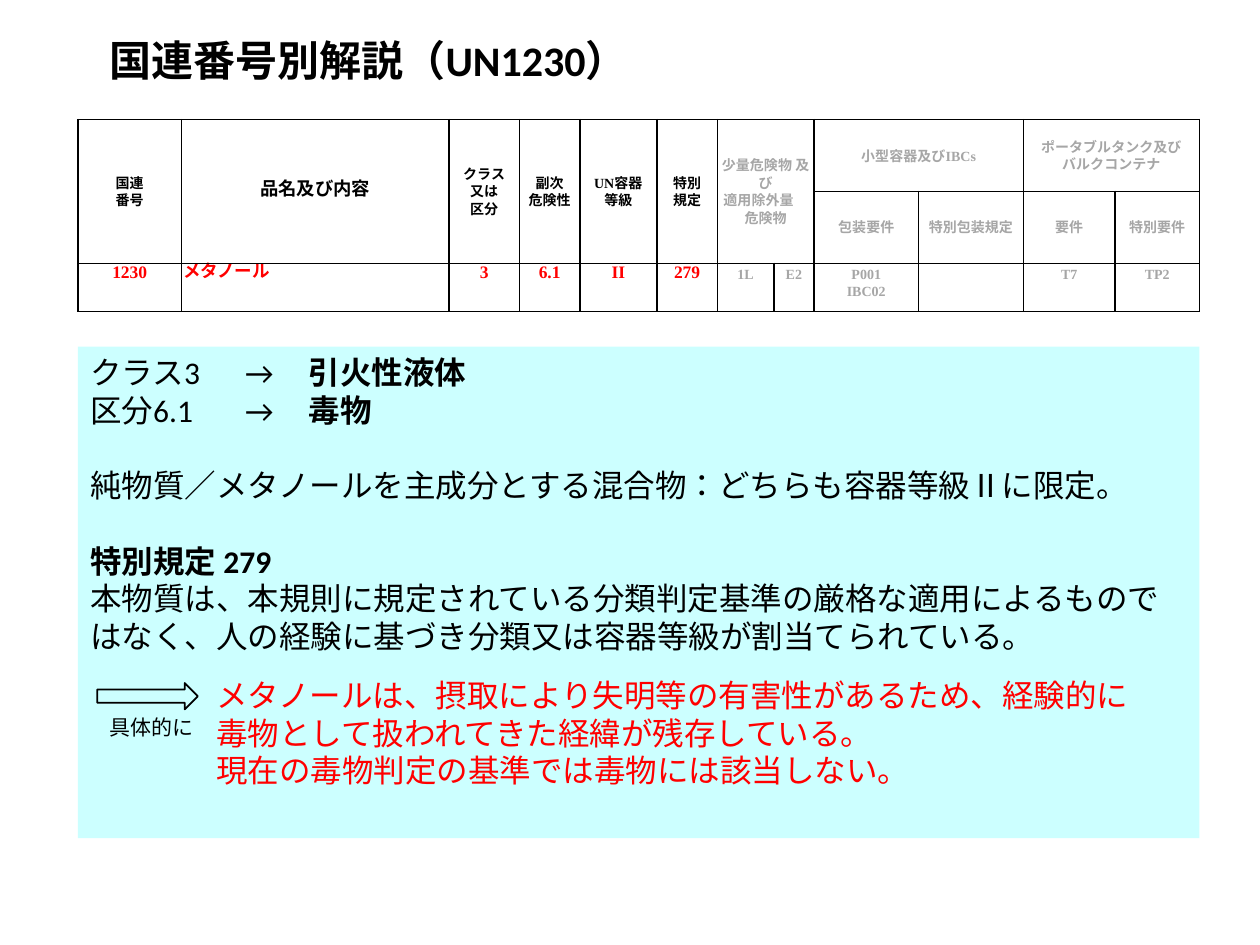
"""Build the UN1230 explanation slide."""
from dataclasses import dataclass

from lxml.etree import SubElement
from pptx import Presentation
from pptx.dml.color import RGBColor
from pptx.enum.lang import MSO_LANGUAGE_ID
from pptx.enum.shapes import MSO_SHAPE
from pptx.enum.text import MSO_ANCHOR, PP_ALIGN
from pptx.oxml import parse_xml
from pptx.oxml.ns import nsdecls, qn
from pptx.util import Cm, Pt


@dataclass(frozen=True)
class Theme:
    black: str = "000000"
    red: str = "FF0000"
    grey: str = "A6A6A6"
    panel: str = "CCFFFF"
    title: float = 24
    body: float = 18
    label: float = 12
    name: float = 10.5
    entry: float = 10
    small: float = 8
    line: float = 1
    sans: str = "Calibri"
    plain: str = "Arial"
    serif: str = "Times New Roman"
    japanese: str = "Noto Sans CJK JP"


class Page:
    def __init__(self, slide, theme):
        self.slide = slide
        self.theme = theme

    def span(self, para, text, size, color=None, name=None, bold=False):
        span = para.add_run()
        span.text = text
        values = {
            "size": Pt(size),
            "name": name or self.theme.sans,
            "bold": bold,
            "language_id": MSO_LANGUAGE_ID.JAPANESE,
        }
        for key, value in values.items():
            setattr(span.font, key, value)
        span.font.color.rgb = RGBColor.from_string(color or self.theme.black)
        east = SubElement(span.font._element, qn("a:ea"))
        east.set("typeface", self.theme.japanese)

    def paragraphs(self, frame, paragraphs):
        for index, (layout, spans) in enumerate(paragraphs):
            para = frame.add_paragraph() if index else frame.paragraphs[0]
            for key, value in {"alignment": PP_ALIGN.LEFT, **layout}.items():
                setattr(para, key, value)
            for text, style in spans:
                self.span(para, text, **style)

    def indent(self, para, left):
        properties = para._p.get_or_add_pPr()
        properties.set("marL", str(left))
        properties.set("indent", "0")

    def tabs(self, para, stops):
        tab_list = SubElement(para._p.get_or_add_pPr(), qn("a:tabLst"))
        for stop in stops:
            tab = SubElement(tab_list, qn("a:tab"))
            tab.set("pos", str(stop))
            tab.set("algn", "l")

    def text(self, place, paragraphs, wrap=True, anchor=MSO_ANCHOR.TOP):
        box = self.slide.shapes.add_textbox(*map(Cm, place))
        box.text_frame.word_wrap = wrap
        box.text_frame.vertical_anchor = anchor
        self.paragraphs(box.text_frame, paragraphs)

    def shape(self, kind, place, fill=None, line=None):
        shape = self.slide.shapes.add_shape(kind, *map(Cm, place))
        shape.shadow.inherit = False
        if fill:
            shape.fill.solid()
            shape.fill.fore_color.rgb = RGBColor.from_string(fill)
        else:
            shape.fill.background()
        if line:
            shape.line.color.rgb = RGBColor.from_string(line)
            shape.line.width = Pt(self.theme.line)
        else:
            shape.line.fill.background()
        return shape

    def panel(self, place, paragraphs):
        box = self.shape(MSO_SHAPE.RECTANGLE, place, fill=self.theme.panel)
        box.text_frame.word_wrap = True
        box.text_frame.vertical_anchor = MSO_ANCHOR.TOP
        self.paragraphs(box.text_frame, paragraphs)
        return box.text_frame.paragraphs

    def border(self, cell):
        for index, side in enumerate(("lnL", "lnR", "lnT", "lnB")):
            line = parse_xml(
                f'<a:{side} {nsdecls("a")} w="{Pt(self.theme.line)}"><a:solidFill>'
                f'<a:srgbClr val="{self.theme.black}"/></a:solidFill></a:{side}>'
            )
            cell._tc.get_or_add_tcPr().insert(index, line)

    def table(self, place, widths, heights):
        size = len(heights), len(widths)
        table = self.slide.shapes.add_table(*size, *map(Cm, place)).table
        table.first_row = table.horz_banding = False
        for column, width in zip(table.columns, widths):
            column.width = Cm(width)
        for row, height in zip(table.rows, heights):
            row.height = Cm(height)
        margins = {"margin_left": 0.03, "margin_right": 0.03, "margin_top": 0.03, "margin_bottom": 0}
        for cell in table.iter_cells():
            for key, value in margins.items():
                setattr(cell, key, Cm(value))
            cell.fill.background()
            self.border(cell)
        return table

    def cell(self, table, row, column, lines, rows=1, columns=1, anchor=MSO_ANCHOR.MIDDLE,
             layout=None, **style):
        cell = table.cell(row, column)
        if rows > 1 or columns > 1:
            cell.merge(table.cell(row + rows - 1, column + columns - 1))
        cell.vertical_anchor = anchor
        base = {"alignment": PP_ALIGN.CENTER, "line_spacing": Pt(10), **(layout or {})}
        style = {"size": self.theme.small, "name": self.theme.serif, "bold": True, **style}
        self.paragraphs(cell.text_frame, [(base, [(line, style)]) for line in lines])


def add_regulation_table(page):
    theme = page.theme
    widths = [2.09, 5.39, 1.42, 1.22, 1.55, 1.22, 1.14, 0.81, 2.11, 2.11, 1.85, 1.7]
    table = page.table((1.57, 2.41, 22.61, 3.87), widths, [1.45, 1.45, 0.97])
    grey = {"color": theme.grey}
    name_style = {"size": theme.name, "layout": {"space_before": Pt(2), "space_after": Pt(3)}}
    headings = [["国連", "番号"], ["品名及び内容"], ["クラス", "又は", "区分"],
                ["副次", "危険性"], ["UN容器", "等級"], ["特別", "規定"]]
    for column, lines in enumerate(headings):
        page.cell(table, 0, column, lines, rows=2, **(name_style if column == 1 else {}))
    page.cell(table, 0, 6, ["少量危険物 及び", "適用除外量　危険物"], rows=2, columns=2, **grey)
    page.cell(table, 0, 8, ["小型容器及びIBCs"], columns=2, **grey)
    page.cell(table, 0, 10, ["ポータブルタンク及び", "バルクコンテナ"], columns=2, **grey)
    for column, heading in enumerate(["包装要件", "特別包装規定", "要件", "特別要件"], 8):
        page.cell(table, 1, column, [heading], **grey)

    entry = {"size": theme.entry, "color": theme.red}
    name_entry = {**entry, "name": theme.japanese, "layout": {"alignment": PP_ALIGN.LEFT}}
    values = ["1230", "メタノール", "3", "6.1", "II", "279", "1L", "E2", "P001\nIBC02", "", "T7", "TP2"]
    for column, value in enumerate(values):
        style = name_entry if column == 1 else entry if column < 6 else grey
        if value:
            page.cell(table, 2, column, value.split("\n"), anchor=MSO_ANCHOR.TOP, **style)


def add_explanation(page):
    theme = page.theme
    body = {"size": theme.body}
    strong = {**body, "bold": True}
    red = {**body, "color": theme.red}
    gap = {"space_after": Pt(21.5)}
    facts = [
        ({}, [("クラス3\t→\t", body), ("引火性液体", strong)]),
        (gap, [("区分6.1\t→\t", body), ("毒物", strong)]),
        (gap, [("純物質／メタノールを主成分とする混合物：どちらも容器等級Ⅱに限定。", body)]),
        ({}, [("特別規定 279", strong)]),
        ({"space_after": Pt(12)}, [(
            "本物質は、本規則に規定されている分類判定基準の厳格な適用によるものではなく、"
            "人の経験に基づき分類又は容器等級が割当てられている。", {**body, "name": theme.plain})]),
    ]
    details = ["メタノールは、摂取により失明等の有害性があるため、経験的に",
               "毒物として扱われてきた経緯が残存している。",
               "現在の毒物判定の基準では毒物には該当しない。"]
    paragraphs = page.panel((1.57, 6.99, 22.61, 9.91),
                            facts + [({}, [(line, red)]) for line in details])
    for para in paragraphs[:2]:
        page.tabs(para, (Cm(3.12), Cm(4.4)))
    for para in paragraphs[len(facts):]:
        page.indent(para, Cm(2.54))


def main():
    deck = Presentation()
    deck.slide_width, deck.slide_height = Cm(25.4), Cm(19.05)
    theme = Theme()
    page = Page(deck.slides.add_slide(deck.slide_layouts[6]), theme)
    add_regulation_table(page)
    add_explanation(page)
    title = ("国連番号別解説（UN1230）", {"size": theme.title, "bold": True})
    page.text((1.96, 0.61, 11.48, 1.32), [({"line_spacing": 0.9}, [title])],
              wrap=False, anchor=MSO_ANCHOR.MIDDLE)
    page.text((1.96, 14.27, 2.41, 0.76), [({}, [("具体的に", {"size": theme.label})])])
    page.shape(MSO_SHAPE.RIGHT_ARROW, (1.96, 13.77, 2.03, 0.53), line=theme.black)
    deck.save("out.pptx")


if __name__ == "__main__":
    main()
